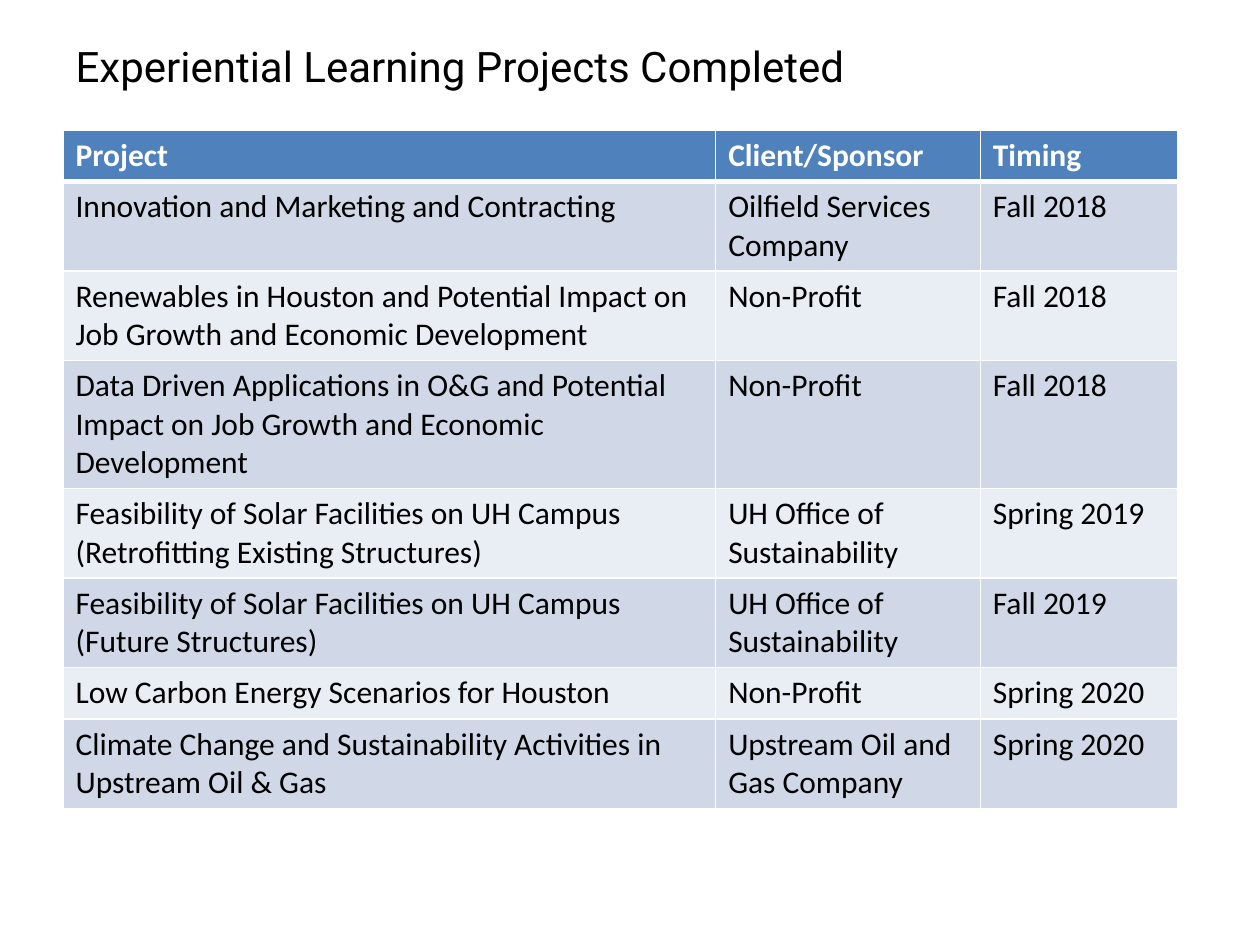
import pptx
import pptx.dml.color
import pptx.enum.text
import pptx.oxml.ns
import pptx.util
from lxml import etree

Inches, Pt = pptx.util.Inches, pptx.util.Pt


def rgb(color):
    return pptx.dml.color.RGBColor.from_string(color)


class Deck:
    title_font, body_font = "Roboto", "Calibri"
    black, white, header = "000000", "FFFFFF", "4F81BD"
    bands = ("D0D8E8", "E9EDF4")

    def __init__(self, width, height):
        self.prs = pptx.Presentation()
        self.prs.slide_width, self.prs.slide_height = Inches(width), Inches(height)
        self.s = self.prs.slides.add_slide(self.prs.slide_layouts[5])

    def run(self, p, text, font, size, color, bold=False):
        r = p.add_run()
        r.text = text
        r.font.name, r.font.size, r.font.bold = font, Pt(size), bold
        r.font.color.rgb = rgb(color)

    def title(self, text, x, y, w, h):
        sp = self.s.shapes.title
        sp.left, sp.top, sp.width, sp.height = map(Inches, (x, y, w, h))
        tf = sp.text_frame
        tf.word_wrap = True
        tf.auto_size = pptx.enum.text.MSO_AUTO_SIZE.NONE
        tf.vertical_anchor = pptx.enum.text.MSO_ANCHOR.MIDDLE
        p = tf.paragraphs[0]
        p.alignment = pptx.enum.text.PP_ALIGN.LEFT
        self.run(p, text, self.title_font, 24, self.black)

    def border(self, cell, side, width):
        qn = pptx.oxml.ns.qn
        ln = etree.SubElement(cell._tc.get_or_add_tcPr(), qn("a:ln" + side), w=str(Pt(width)))
        fill = etree.SubElement(ln, qn("a:solidFill"))
        etree.SubElement(fill, qn("a:srgbClr"), val=self.white)

    def table(self, rows, x, y, widths, row_height):
        frame = self.s.shapes.add_table(
            len(rows), len(widths), Inches(x), Inches(y),
            Inches(sum(widths)), Inches(row_height * len(rows)))
        table = frame.table
        for column, width in zip(table.columns, widths):
            column.width = Inches(width)
        for i, row in enumerate(rows):
            table.rows[i].height = Inches(row_height)
            is_header = i == 0
            fill = self.header if is_header else self.bands[(i - 1) % 2]
            color = self.white if is_header else self.black
            for j, text in enumerate(row):
                cell = table.cell(i, j)
                # A thicker rule separates the header from the body
                for side in "LRTB":
                    thick = (i, side) in ((0, "B"), (1, "T"))
                    self.border(cell, side, 3 if thick else 1)
                cell.fill.solid()
                cell.fill.fore_color.rgb = rgb(fill)
                p = cell.text_frame.paragraphs[0]
                self.run(p, text, self.body_font, 18, color, is_header)


PROJECTS = [
    ("Project", "Client/Sponsor", "Timing"),
    ("Innovation and Marketing and Contracting",
     "Oilfield Services Company", "Fall 2018"),
    ("Renewables in Houston and Potential Impact on Job Growth and Economic Development",
     "Non-Profit", "Fall 2018"),
    ("Data Driven Applications in O&G and Potential Impact on Job Growth "
     "and Economic Development", "Non-Profit", "Fall 2018"),
    ("Feasibility of Solar Facilities on UH Campus (Retrofitting Existing Structures)",
     "UH Office of Sustainability", "Spring 2019"),
    ("Feasibility of Solar Facilities on UH Campus (Future Structures)",
     "UH Office of Sustainability", "Fall 2019"),
    ("Low Carbon Energy Scenarios for Houston", "Non-Profit", "Spring 2020"),
    ("Climate Change and Sustainability Activities in Upstream Oil & Gas",
     "Upstream Oil and Gas Company", "Spring 2020"),
]


def main():
    deck = Deck(10, 7.5)
    # Heading
    deck.title("Experiential Learning Projects Completed", 0.5, 0.3, 9, 0.45)
    # Project list
    deck.table(PROJECTS, 0.5, 1.03, (5.18, 2.1, 1.57), 0.41)
    deck.prs.save("out.pptx")


if __name__ == "__main__":
    main()
